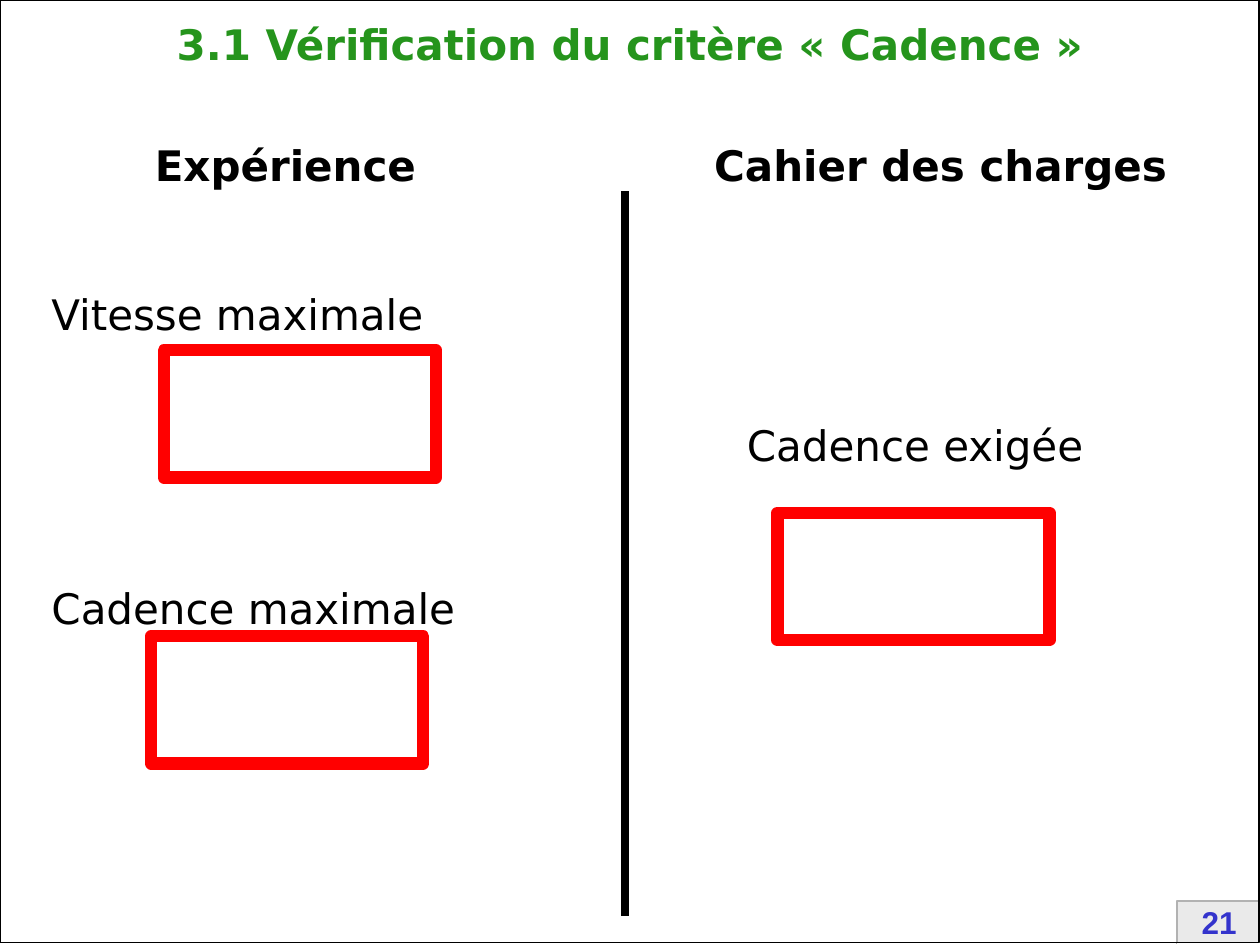
import dataclasses

import pptx
import pptx.dml.color
import pptx.enum.shapes
import pptx.enum.text
import pptx.oxml.ns
import pptx.util
from lxml import etree

Inches = pptx.util.Inches
Align = pptx.enum.text.PP_ALIGN
Anchor = pptx.enum.text.MSO_ANCHOR


@dataclasses.dataclass(frozen=True)
class Theme:
    """Colours, fonts and type sizes of the slide."""
    title: str = "25941C"
    ink: str = "000000"
    answer: str = "FF0000"
    number: str = "3333CC"
    badge: str = "EAEAEA"
    badge_shade: str = "B2B2B2"
    badge_light: str = "FFFFFF"
    font: str = "DejaVu Sans"
    number_font: str = "Arial"
    text_size: int = 24
    number_size: int = 18


class SlideBuilder:
    """Draws styled elements on the current slide."""

    def __init__(self, slide, theme):
        self.slide = slide
        self.theme = theme

    def color(self, value):
        return pptx.dml.color.RGBColor.from_string(value)

    def add_text(self, shape, text, color, bold=False, align=Align.LEFT, font=None, size=None):
        frame = shape.text_frame
        frame.word_wrap = True
        frame.vertical_anchor = Anchor.MIDDLE
        paragraph = frame.paragraphs[0]
        paragraph.alignment = align
        run = paragraph.add_run()
        run.text = text
        run.font.name = font or self.theme.font
        run.font.size = pptx.util.Pt(size or self.theme.text_size)
        run.font.bold = bold
        run.font.color.rgb = self.color(color)

    def title(self, text, left, top, width, height):
        shape = self.slide.shapes.title
        shape.left, shape.top = Inches(left), Inches(top)
        shape.width, shape.height = Inches(width), Inches(height)
        self.add_text(shape, text, self.theme.title, True, Align.CENTER)

    def text(self, text, left, top, width, height=0.5, color=None, **style):
        shape = self.slide.shapes.add_textbox(
            Inches(left), Inches(top), Inches(width), Inches(height))
        self.add_text(shape, text, color or self.theme.ink, **style)

    def rectangle(self, left, top, width, height, fill=None, line=None, weight=1):
        shape = self.slide.shapes.add_shape(
            pptx.enum.shapes.MSO_SHAPE.RECTANGLE,
            Inches(left), Inches(top), Inches(width), Inches(height))
        self.finish(shape, fill, line, weight)

    def outline(self, points, line):
        start, *others = [(Inches(x), Inches(y)) for x, y in points]
        builder = self.slide.shapes.build_freeform(*start)
        builder.add_line_segments(others, close=False)
        self.finish(builder.convert_to_shape(), None, line, 1)

    def finish(self, shape, fill, line, weight):
        shape.shadow.inherit = False
        if fill:
            shape.fill.solid()
            shape.fill.fore_color.rgb = self.color(fill)
        else:
            shape.fill.background()
        if line:
            shape.line.color.rgb = self.color(line)
            shape.line.width = pptx.util.Pt(weight)
        else:
            shape.line.fill.background()

    def divider(self, x, top, bottom, weight):
        connector = self.slide.shapes.add_connector(
            pptx.enum.shapes.MSO_CONNECTOR.STRAIGHT,
            Inches(x), Inches(top), Inches(x), Inches(bottom))
        connector.line.color.rgb = self.color(self.theme.ink)
        connector.line.width = pptx.util.Pt(weight)
        properties = connector._element.spPr
        etree.SubElement(properties, pptx.oxml.ns.qn("a:effectLst"))

    def page_badge(self, number, left, top, right, bottom):
        theme = self.theme
        self.rectangle(left, top, right - left, bottom - top, fill=theme.badge)
        self.outline([(right, top), (left, top), (left, bottom)], theme.badge_shade)
        self.outline([(right, top), (right, bottom), (left, bottom)], theme.badge_light)
        self.text(number, left + 0.04, top - 0.03, 0.59, 0.4, theme.number, bold=True,
                  align=Align.CENTER, font=theme.number_font, size=theme.number_size)


def main():
    presentation = pptx.Presentation()
    presentation.slide_width, presentation.slide_height = Inches(10), Inches(7.5)
    theme = Theme()
    slide = presentation.slides.add_slide(presentation.slide_layouts[5])
    builder = SlideBuilder(slide, theme)

    builder.page_badge("21", 9.34, 7.15, 9.99, 7.49)
    builder.rectangle(0, 0, 9.99, 7.48, line=theme.ink)
    builder.title("3.1 Vérification du critère « Cadence »", 0, 0.09, 10, 0.51)
    builder.divider(4.96, 1.52, 7.27, 5)

    for heading, left, width in (("Expérience", 1.13, 2.95), ("Cahier des charges", 5.57, 4.07)):
        builder.text(heading, left, 1.06, width, bold=True)

    measures = (
        ("Vitesse maximale", 0.31, 2.24, 4.76, 1.3, 2.78),
        ("Cadence maximale", 0.31, 4.57, 4.48, 1.2, 5.05),
        ("Cadence exigée", 5.83, 3.28, 3.13, 6.17, 4.07),
    )
    for label, left, top, width, box_left, box_top in measures:
        builder.text(label, left, top, width)
        builder.rectangle(box_left, box_top, 2.16, 1.01, line=theme.answer, weight=7)

    presentation.save("out.pptx")


if __name__ == "__main__":
    main()
